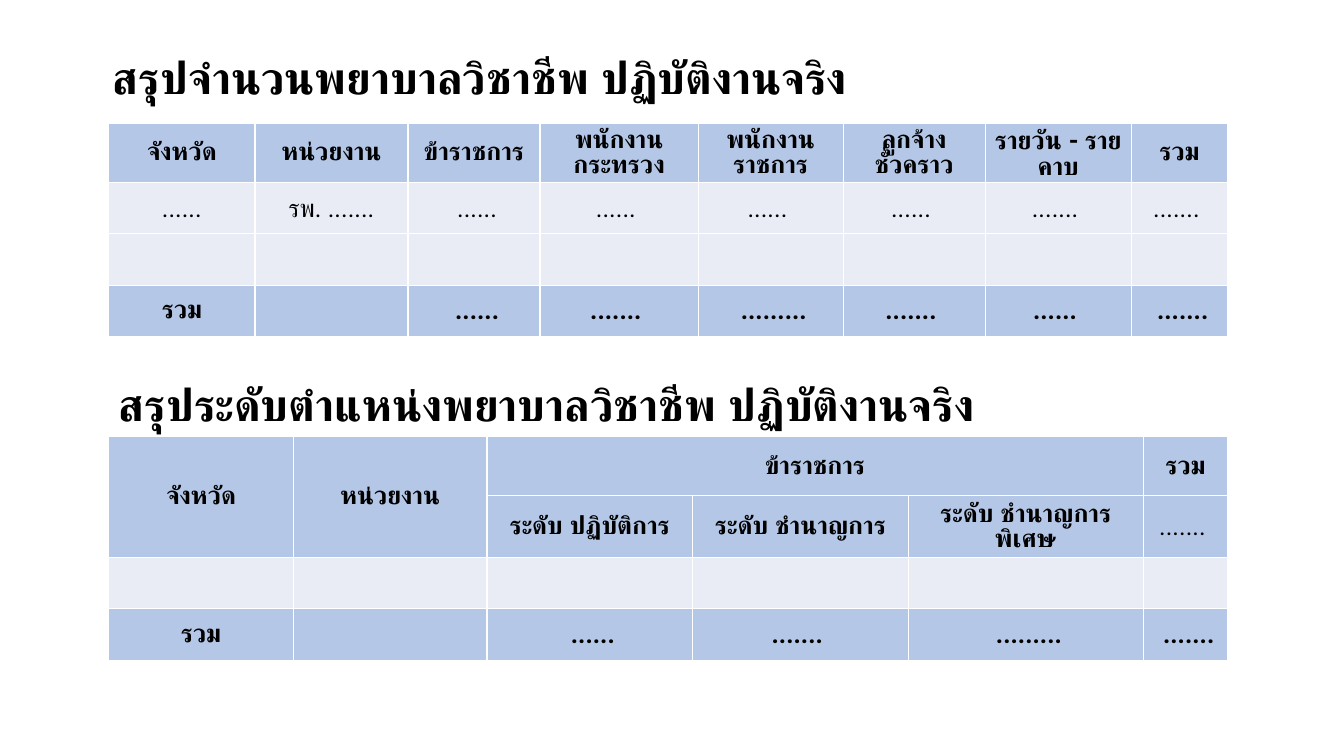
"""Build a slide of two summary tables on professional nurses in post."""
from lxml import etree
from pptx import Presentation
from pptx import util as u
from pptx.dml.color import RGBColor
from pptx.enum import text
from pptx.oxml.ns import qn

SECTIONS = [
    {
        "title": "สรุปจำนวนพยาบาลวิชาชีพ ปฏิบัติงานจริง",
        "title_at": (1.02, 0.5),
        "top": 1.22,
        "columns": [1.45, 1.52, 1.31, 1.57, 1.44, 1.41, 1.45, 0.96],
        "merges": [],
        "rows": [
            ("head", ["จังหวัด", "หน่วยงาน", "ข้าราชการ", "พนักงานกระทรวง", "พนักงานราชการ",
                      "ลูกจ้างชั่วคราว", "รายวัน - รายคาบ", "รวม"]),
            ("body", ["......", "รพ. .......", " ......", "...... ", "...... ", "...... ",
                      "....... ", "....... "]),
            ("body", [""] * 8),
            ("total", ["รวม", "", " ......", "....... ", " .........", "....... ", "...... ",
                       " ......."]),
        ],
    },
    {
        "title": "สรุประดับตำแหน่งพยาบาลวิชาชีพ ปฏิบัติงานจริง",
        "title_at": (1.08, 3.75),
        "top": 4.33,
        "columns": [1.83, 1.92, 2.04, 2.14, 2.33, 0.84],
        "merges": [((0, 0), (1, 0)), ((0, 1), (1, 1)), ((0, 2), (0, 4))],
        "rows": [
            ("head", ["จังหวัด", "หน่วยงาน", "ข้าราชการ", "", "", "รวม"]),
            ("head", ["", "", "ระดับ ปฏิบัติการ", "ระดับ ชำนาญการ", "ระดับ ชำนาญการพิเศษ",
                      "....... "]),
            ("body", [""] * 6),
            ("total", ["รวม", "", " ......", "....... ", " .........", " ......."]),
        ],
    },
]

THEME = {
    "ink": "000000",
    "border": "FFFFFF",
    "fills": {"head": "B4C7E7", "body": "E9EBF5", "total": "B4C7E7"},
    "title": {"name": "Calibri", "size": u.Pt(32), "bold": True},
    "cell": {"name": "Roboto", "size": u.Pt(18)},
}
SLIDE = (13.33, 7.5)
TITLE_SIZE = (10.25, 0.73)
TABLE_LEFT, TABLE_WIDTH = 1.08, 11.1
ROW_HEIGHTS = [0.59, 0.51, 0.51, 0.51]
CELL_FORMAT = {
    "vertical_anchor": text.MSO_ANCHOR.MIDDLE,
    "margin_left": u.Inches(0.01),
    "margin_right": u.Inches(0.01),
    "margin_top": u.Inches(0.01),
    "margin_bottom": 0,
}


def apply(target, values):
    for name, value in values.items():
        setattr(target, name, value)


def style_font(font, values):
    apply(font, values)
    font.color.rgb = RGBColor.from_string(THEME["ink"])


def add_borders(cell):
    props = cell._tc.get_or_add_tcPr()
    for index, side in enumerate(("lnL", "lnR", "lnT", "lnB")):
        line = etree.Element(qn(f"a:{side}"), w=str(u.Pt(1)))
        fill = etree.SubElement(line, qn("a:solidFill"))
        etree.SubElement(fill, qn("a:srgbClr"), val=THEME["border"])
        props.insert(index, line)


def add_title(slide, section):
    box = slide.shapes.add_textbox(*map(u.Inches, section["title_at"] + TITLE_SIZE))
    tf = box.text_frame
    tf.word_wrap = True
    p = tf.paragraphs[0]
    p.line_spacing = 0.9
    r = p.add_run()
    r.text = section["title"]
    style_font(r.font, THEME["title"])


def fill_cell(cell, kind, words):
    apply(cell, CELL_FORMAT)
    cell.fill.solid()
    cell.fill.fore_color.rgb = RGBColor.from_string(THEME["fills"][kind])
    add_borders(cell)
    p = cell.text_frame.paragraphs[0]
    p.alignment = text.PP_ALIGN.CENTER
    if words:
        r = p.add_run()
        r.text = words
        bold = kind == "total" or kind == "head" and not words.startswith(".")
        style_font(r.font, {**THEME["cell"], "bold": bold})


def add_summary(slide, section):
    rows, columns = section["rows"], section["columns"]
    frame = slide.shapes.add_table(
        len(rows), len(columns), u.Inches(TABLE_LEFT), u.Inches(section["top"]),
        u.Inches(TABLE_WIDTH), u.Inches(sum(ROW_HEIGHTS)))
    table = frame.table
    apply(table, {"first_row": False, "horz_banding": False})
    for column, share in zip(table.columns, columns):
        column.width = u.Inches(TABLE_WIDTH * share / sum(columns))
    for row, height, (kind, entries) in zip(table.rows, ROW_HEIGHTS, rows):
        row.height = u.Inches(height)
        for cell, words in zip(row.cells, entries):
            fill_cell(cell, kind, words)
    for first, last in section["merges"]:
        table.cell(*first).merge(table.cell(*last))


def main():
    prs = Presentation()
    prs.slide_width, prs.slide_height = map(u.Inches, SLIDE)
    slide = prs.slides.add_slide(prs.slide_layouts[6])
    for section in SECTIONS:
        add_summary(slide, section)
        add_title(slide, section)
    prs.save("out.pptx")


if __name__ == "__main__":
    main()
